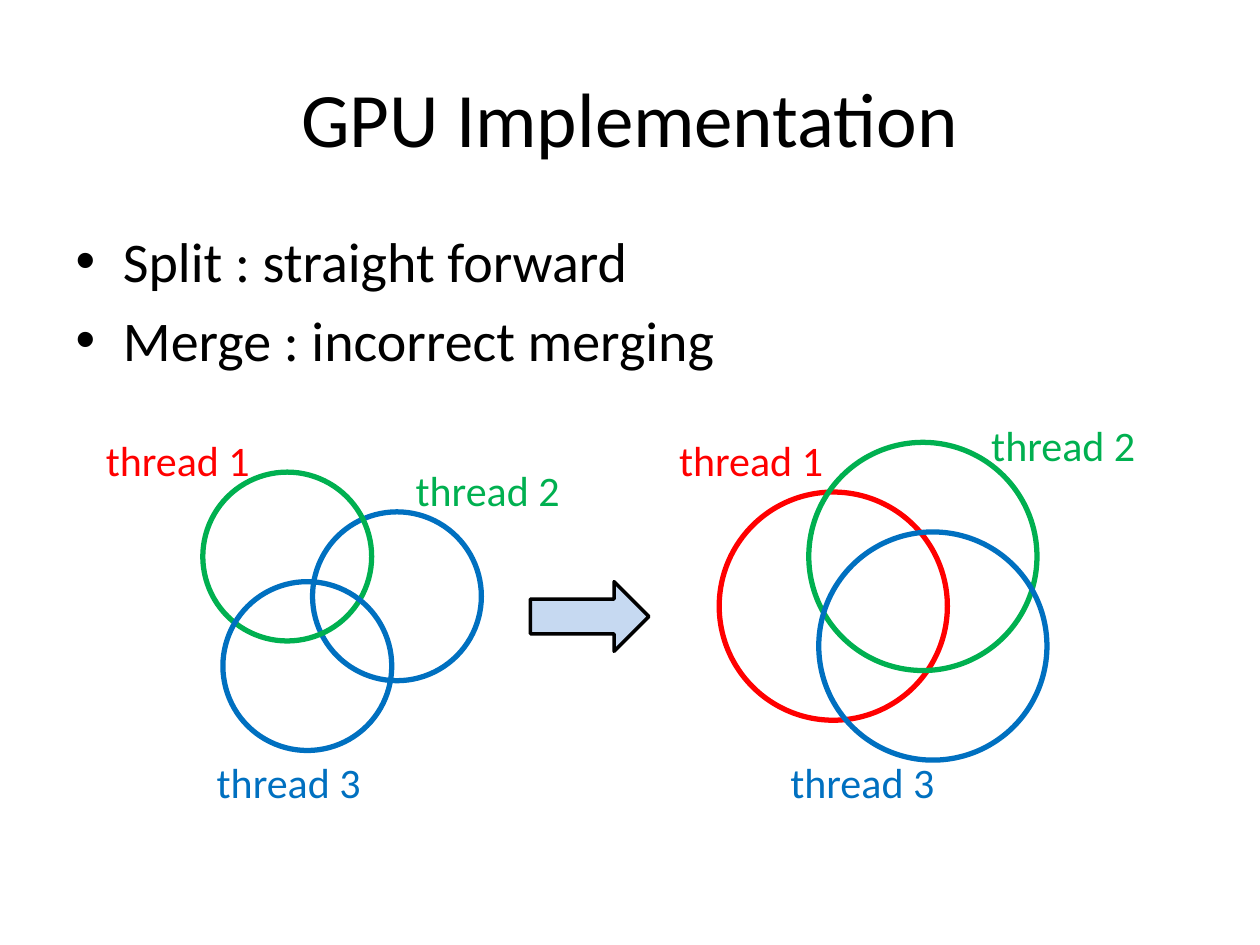
from pptx import Presentation
from pptx.dml.color import RGBColor
from pptx.enum.shapes import MSO_SHAPE as SHAPE
from pptx.enum.text import MSO_ANCHOR as ANCHOR, MSO_AUTO_SIZE as AUTO, PP_ALIGN as ALIGN
from pptx.util import Pt

BLACK = RGBColor(0x00, 0x00, 0x00)
RED = RGBColor(0xFF, 0x00, 0x00)
GREEN = RGBColor(0x00, 0xB0, 0x50)
BLUE = RGBColor(0x00, 0x70, 0xC0)
PALE_BLUE = RGBColor(0xC6, 0xD9, 0xF1)
FONT = "Calibri"

# Content
TITLE = "GPU Implementation"
BULLETS = ["Split : straight forward", "Merge : incorrect merging"]
THREAD_COLORS = {"thread 1": RED, "thread 2": GREEN, "thread 3": BLUE}
LABEL_SIZE = (98, 36)
ARROW_BOX = (303.1, 332.4, 67.7, 39.8)

# Each stage: circle diameter, circles (left, top, colour), labels (left, top)
STAGES = [
    {"diameter": 96.5,
     "circles": [(178.6, 292.5, BLUE), (115.9, 269.8, GREEN), (127.4, 332.4, BLUE)],
     "labels": {"thread 1": (52.6, 244.8), "thread 2": (229.7, 262), "thread 3": (116, 428.6)}},
    {"diameter": 130.4,
     "circles": [(411, 281.2, RED), (462.2, 252.8, GREEN), (467.9, 304, BLUE)],
     "labels": {"thread 1": (380.2, 244.8), "thread 2": (558.6, 236.3), "thread 3": (443.8, 428.6)}},
]


def place(shape, *box):
    for name, value in zip(("left", "top", "width", "height"), box):
        setattr(shape, name, Pt(value))


def write(tf, lines, size, color, **paragraph_format):
    for i, line in enumerate(lines):
        p = tf.paragraphs[0] if i == 0 else tf.add_paragraph()
        for name, value in paragraph_format.items():
            setattr(p, name, value)
        r = p.add_run()
        r.text = line
        for name, value in {"name": FONT, "size": Pt(size)}.items():
            setattr(r.font, name, value)
        r.font.color.rgb = color


def add_outline(s, kind, box, color, width, fill=None):
    sp = s.shapes.add_shape(kind, *map(Pt, box))
    sp.shadow.inherit = False
    if fill is None:
        sp.fill.background()
    else:
        sp.fill.solid()
        sp.fill.fore_color.rgb = fill
    sp.line.color.rgb = color
    sp.line.width = Pt(width)


def add_label(s, text, left, top):
    tf = s.shapes.add_textbox(*map(Pt, (left, top, *LABEL_SIZE))).text_frame
    for name, value in {"word_wrap": False, "auto_size": AUTO.SHAPE_TO_FIT_TEXT}.items():
        setattr(tf, name, value)
    write(tf, [text], 24, THREAD_COLORS[text], alignment=ALIGN.CENTER)


prs = Presentation()
prs.slide_width, prs.slide_height = Pt(720), Pt(540)
s = prs.slides.add_slide(prs.slide_layouts[1])

# Title and bullets
title, body = s.shapes.title, s.placeholders[1]
place(title, 36, 21.6, 648, 90)
place(body, 36, 126, 648, 356.4)
title.text_frame.vertical_anchor = ANCHOR.MIDDLE
write(title.text_frame, [TITLE], 44, BLACK, alignment=ALIGN.CENTER)
write(body.text_frame, BULLETS, 32, BLACK)

# Circles before and after the merge
for stage in STAGES:
    d = stage["diameter"]
    for left, top, color in stage["circles"]:
        add_outline(s, SHAPE.OVAL, (left, top, d, d), color, 3)
    for text, (left, top) in stage["labels"].items():
        add_label(s, text, left, top)

# Arrow between the stages
add_outline(s, SHAPE.RIGHT_ARROW, ARROW_BOX, BLACK, 2, PALE_BLUE)

prs.save("out.pptx")
